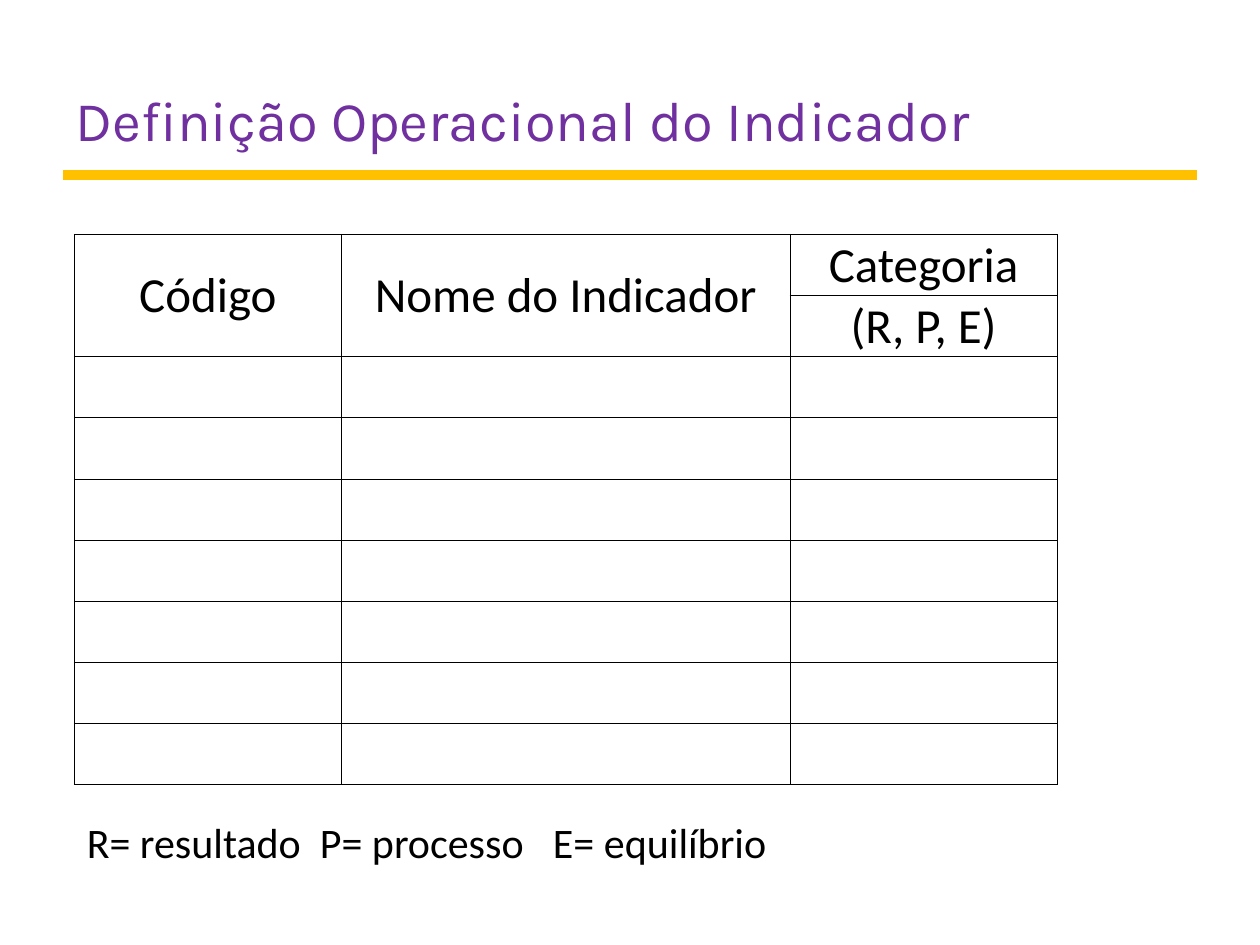
import pptx
import pptx.util
import pptx.dml.color
import pptx.enum.shapes
import pptx.enum.text
import pptx.oxml
import lxml.etree
from pptx.oxml.ns import qn

TITLE = "Definição Operacional do Indicador"
HEADINGS = {
    (0, 0): "Código",
    (0, 1): "Nome do Indicador",
    (0, 2): "Categoria",
    (1, 2): "(R, P, E)",
}
LEGEND = ["R= resultado", "P= processo", "E= equilíbrio"]
LEGEND_STEP = 1.85
COLUMN_WIDTHS = [2.12, 3.56, 2.12]
ROW_COUNT = 9
TABLE_LEFT, TABLE_TOP, TABLE_HEIGHT = 0.59, 1.86, 4.37
BLACK, PURPLE, GOLD = "000000", "7030A0", "FFC000"

inches = pptx.util.Inches
points = pptx.util.Pt


def color(value):
    return pptx.dml.color.RGBColor.from_string(value)


def add_run(paragraph, text, size, font, fill):
    run = paragraph.add_run()
    run.text = text
    run.font.size = points(size)
    run.font.name = font
    run.font.color.rgb = color(fill)


def add_text_box(slide, left, top, width, height, anchor):
    frame = slide.shapes.add_textbox(*map(inches, (left, top, width, height))).text_frame
    frame.word_wrap = True
    frame.vertical_anchor = anchor
    return frame


def set_borders(cell):
    properties = cell._tc.get_or_add_tcPr()
    for position, side in enumerate(("lnL", "lnR", "lnT", "lnB")):
        line = lxml.etree.Element(qn("a:" + side), w=str(points(0.5)))
        fill = lxml.etree.SubElement(line, qn("a:solidFill"))
        lxml.etree.SubElement(fill, qn("a:srgbClr"), val=BLACK)
        properties.insert(position, line)


def add_title(slide):
    rule = slide.shapes.add_connector(
        pptx.enum.shapes.MSO_CONNECTOR.STRAIGHT,
        inches(0.5), inches(1.39), inches(9.5), inches(1.39))
    rule.line.color.rgb = color(GOLD)
    rule.line.width = points(6)
    lxml.etree.SubElement(rule._element.spPr, qn("a:effectLst"))
    frame = add_text_box(slide, 0.5, 0.25, 9, 1, pptx.enum.text.MSO_ANCHOR.BOTTOM)
    frame.margin_top = frame.margin_bottom = inches(0.04)
    add_run(frame.paragraphs[0], TITLE, 32, "Karla", PURPLE)


def add_indicator_table(slide):
    table = slide.shapes.add_table(
        ROW_COUNT, len(COLUMN_WIDTHS), inches(TABLE_LEFT), inches(TABLE_TOP),
        inches(sum(COLUMN_WIDTHS)), inches(TABLE_HEIGHT)).table
    table.first_row = table.horz_banding = False
    for column, width in zip(table.columns, COLUMN_WIDTHS):
        column.width = inches(width)
    for row in table.rows:
        row.height = inches(TABLE_HEIGHT / ROW_COUNT)
    for cell in table.iter_cells():
        cell.fill.background()
        set_borders(cell)
    for column in (0, 1):
        table.cell(0, column).merge(table.cell(1, column))
    for (row, column), text in HEADINGS.items():
        cell = table.cell(row, column)
        cell.vertical_anchor = pptx.enum.text.MSO_ANCHOR.MIDDLE
        cell.margin_left = cell.margin_right = cell.margin_top = inches(0.01)
        cell.margin_bottom = 0
        paragraph = cell.text_frame.paragraphs[0]
        paragraph.alignment = pptx.enum.text.PP_ALIGN.CENTER
        add_run(paragraph, text, 28, "Calibri", BLACK)


def add_legend(slide):
    frame = add_text_box(slide, TABLE_LEFT, 6.43, 8.19, 0.5, pptx.enum.text.MSO_ANCHOR.TOP)
    frame.auto_size = pptx.enum.text.MSO_AUTO_SIZE.SHAPE_TO_FIT_TEXT
    paragraph = frame.paragraphs[0]
    tabs = lxml.etree.SubElement(paragraph._p.get_or_add_pPr(), qn("a:tabLst"))
    for index in range(1, len(LEGEND)):
        lxml.etree.SubElement(
            tabs, qn("a:tab"), pos=str(inches(LEGEND_STEP * index)), algn="l")
    add_run(paragraph, "\t".join(LEGEND), 24, "Calibri", BLACK)


def main():
    presentation = pptx.Presentation()
    presentation.slide_width = inches(10)
    presentation.slide_height = inches(7.5)
    slide = presentation.slides.add_slide(presentation.slide_layouts[6])
    add_title(slide)
    add_indicator_table(slide)
    add_legend(slide)
    presentation.save("out.pptx")


if __name__ == "__main__":
    main()
